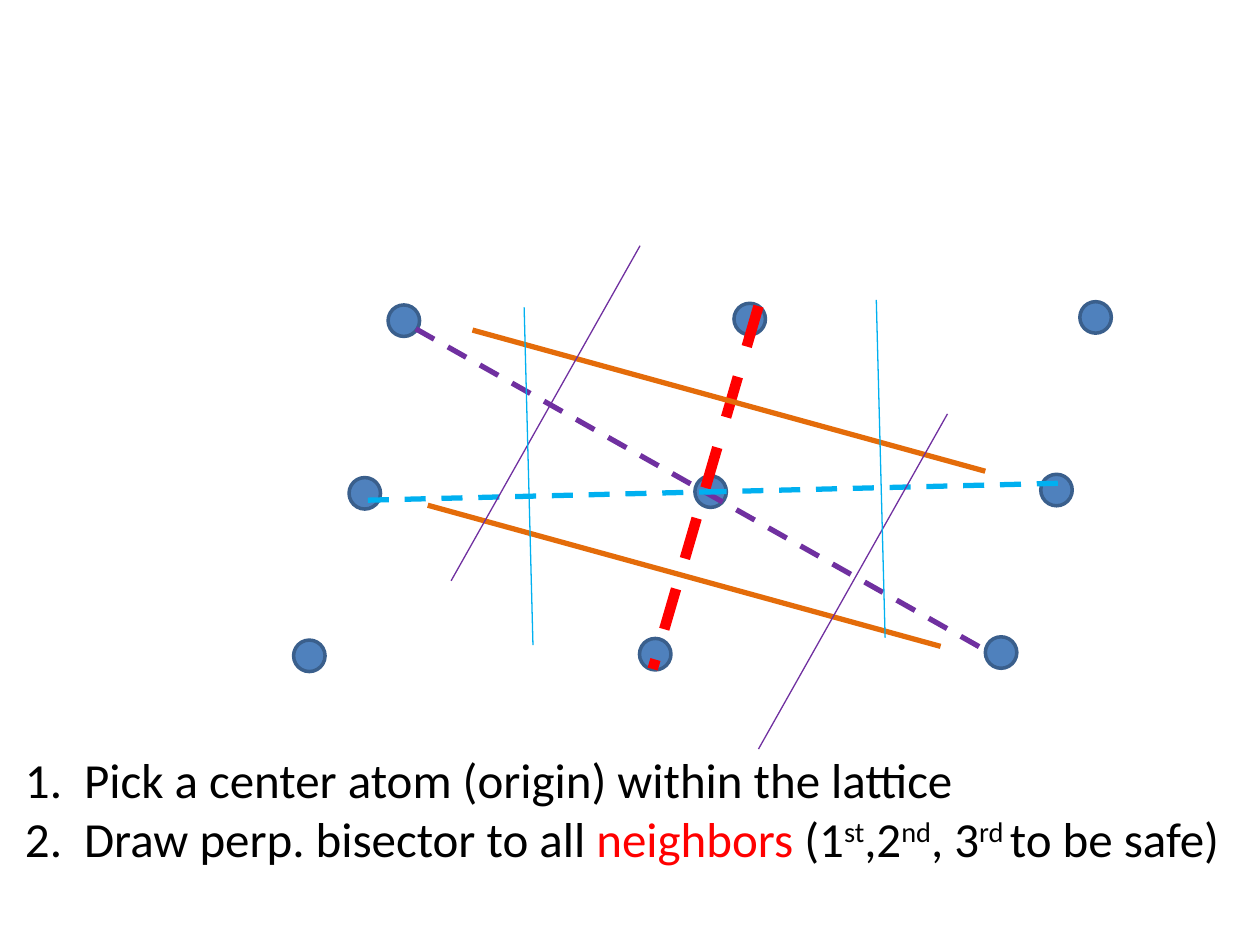
from lxml.etree import SubElement
from pptx import Presentation
from pptx.dml.color import RGBColor
from pptx.enum.dml import MSO_LINE
from pptx.enum.shapes import MSO_CONNECTOR, MSO_SHAPE
from pptx.oxml.ns import qn
from pptx.util import Inches, Pt

COLS, ROWS = 100, 75
CELL = Inches(10) // COLS
INK = {
    "atom": "4F81BD", "rim": "3A5F8C", "red": "FF0000", "orange": "E46C0A",
    "purple": "7030A0", "cyan": "00B0F0", "text": "000000",
}
STARTS = [(30.8, 24.2), (27.7, 37.9), (23.3, 50.8)]
STEP = (27.45, -0.13)
LINES = [
    ("red", 6, True, (60.2, 24.3), (51.8, 53.1), None),
    ("orange", 3, False, (37.5, 26.2), (78.2, 37.4), (-3.55, 13.9)),
    ("purple", 3, True, (33, 26.1), (78.2, 51.6), None),
    ("cyan", 3, True, (29.2, 39.7), (57.6, 39), (26.8, -0.65)),
    ("purple", 0.75, False, (50.8, 19.5), (35.8, 46.1), (24.4, 13.35)),
    ("cyan", 0.75, False, (41.6, 24.4), (42.3, 51.2), (27.95, -0.6)),
]
STEPS = [
    [("Pick a center atom (origin) within the lattice", "")],
    [("Draw perp. bisector to all ", ""), ("neighbors", "red"), (" (1", ""),
     ("st", "sup"), (",2", ""), ("nd", "sup"), (", 3", ""), ("rd ", "sup"),
     ("to be safe)", "")],
]


def grid(*cells):
    return [round(cell * CELL) for cell in cells]


def tint(name):
    return RGBColor.from_string(INK[name])


def add_atom(slide, x, y):
    atom = slide.shapes.add_shape(MSO_SHAPE.OVAL, *grid(x, y, 2.5, 2.5))
    atom.shadow.inherit = False
    atom.fill.solid()
    atom.fill.fore_color.rgb = tint("atom")
    atom.line.color.rgb = tint("rim")
    atom.line.width = Pt(2)


def add_line(slide, color, width, dashed, start, end):
    line = slide.shapes.add_connector(
        MSO_CONNECTOR.STRAIGHT, *grid(*start, *end))
    line.line.color.rgb = tint(color)
    line.line.width = Pt(width)
    if dashed:
        line.line.dash_style = MSO_LINE.DASH
    SubElement(line._element.spPr, qn("a:effectLst"))


def add_steps(slide):
    frame = slide.shapes.add_textbox(*grid(1, 59, 99, 10.4)).text_frame
    frame.word_wrap = True
    for index, parts in enumerate(STEPS):
        para = frame.paragraphs[0] if index == 0 else frame.add_paragraph()
        para.font.name = "Calibri"
        para.font.size = Pt(28)
        props = para._p.get_or_add_pPr()
        indent = grid(4.7)[0]
        props.set("marL", str(indent))
        props.set("indent", str(-indent))
        number = props.makeelement(qn("a:buAutoNum"), {"type": "arabicPeriod"})
        props.insert(0, number)
        for text, style in parts:
            run = para.add_run()
            run.text = text
            run.font.color.rgb = tint("red" if style == "red" else "text")
            if style == "sup":
                run._r.get_or_add_rPr().set("baseline", "30000")


def main():
    deck = Presentation()
    deck.slide_width, deck.slide_height = grid(COLS, ROWS)
    slide = deck.slides.add_slide(deck.slide_layouts[6])
    add_steps(slide)
    for col in range(3):
        for x, y in STARTS:
            add_atom(slide, x + col * STEP[0], y + col * STEP[1])
    for color, width, dashed, start, end, shift in LINES:
        add_line(slide, color, width, dashed, start, end)
        if shift:
            ends = [(x + shift[0], y + shift[1]) for x, y in (start, end)]
            add_line(slide, color, width, dashed, *ends)
    deck.save("out.pptx")


if __name__ == "__main__":
    main()
